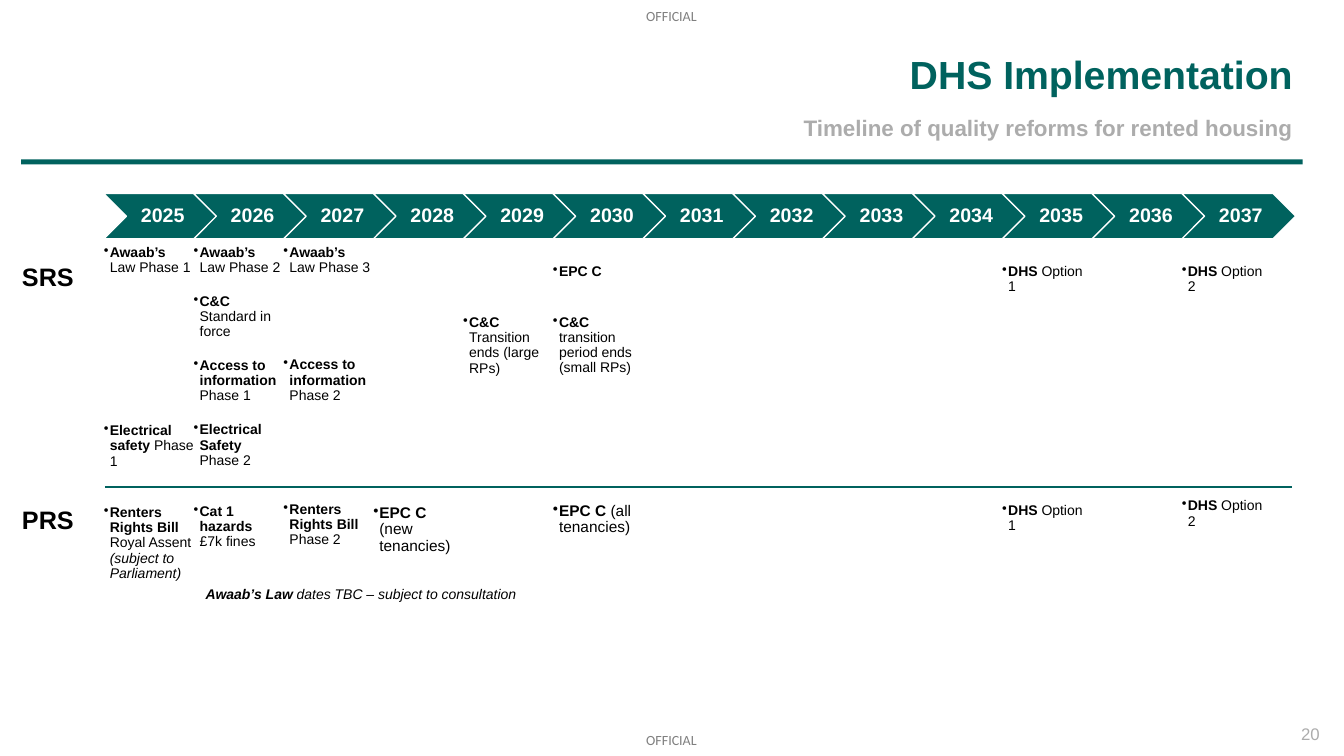
"""Build the slide that shows the timeline of quality reforms for rented housing."""
from lxml.etree import SubElement
from pptx import Presentation
from pptx.dml.color import RGBColor
from pptx.enum.shapes import MSO_CONNECTOR, MSO_SHAPE
from pptx.enum.text import MSO_ANCHOR, PP_ALIGN
from pptx.oxml.ns import qn
from pptx.util import Pt

PX = 9144
GREEN, GREY, BLACK, WHITE = "00625E", "ACACAC", "000000", "FFFFFF"
YEAR_LEFT, YEAR_STEP, COLUMN_BOTTOM = 103, 89.1, 561


def rgb(code):
    return RGBColor.from_string(code)


def write(shape, *paragraphs, size=10, color=BLACK, font="Arial", align=PP_ALIGN.LEFT,
          anchor=MSO_ANCHOR.TOP, insets=(0, 0, 0, 0), wrap=True, spacing=1, bullet=False):
    """Fill a shape; each paragraph is (space before, size or None, runs of (text, style))."""
    frame = shape.text_frame
    frame.word_wrap = wrap
    frame.vertical_anchor = anchor
    frame.margin_left, frame.margin_top, frame.margin_right, frame.margin_bottom = [
        inset * PX for inset in insets]
    for number, (before, own_size, runs) in enumerate(paragraphs):
        paragraph = frame.add_paragraph() if number else frame.paragraphs[0]
        properties = paragraph._p.get_or_add_pPr()
        indent = 6 * PX if bullet else 0
        properties.set("marL", str(indent))
        properties.set("indent", str(-indent))
        if bullet:
            SubElement(properties, qn("a:buChar"), char="•")
        else:
            SubElement(properties, qn("a:buNone"))
        paragraph.alignment = align
        paragraph.line_spacing = spacing
        paragraph.space_before = Pt(before)
        paragraph.space_after = Pt(0)
        points = own_size or size
        for text, style in runs:
            if text == "\n":
                paragraph.add_line_break()
                SubElement(paragraph._p[-1], qn("a:rPr"), sz=str(points * 100))
                continue
            run = paragraph.add_run()
            run.text = text
            run.font.name = font
            run.font.size = Pt(points)
            run.font.bold = "b" in style
            run.font.italic = "i" in style
            run.font.color.rgb = rgb(color)


presentation = Presentation()
presentation.slide_width, presentation.slide_height = 1333 * PX, 750 * PX
slide = presentation.slides.add_slide(presentation.slide_layouts[1])
shapes = slide.shapes

for marking_top in (7, 726):
    marking = shapes.add_textbox(641 * PX, marking_top * PX, 53 * PX, 17 * PX)
    write(marking, (0, None, [("OFFICIAL", "")]), font="Calibri", color="7F7F7F", wrap=False)

header_rule = shapes.add_shape(MSO_SHAPE.RECTANGLE, 21 * PX, 158 * PX, 1271 * PX, 5 * PX)
header_rule.shadow.inherit = False
header_rule.fill.solid()
header_rule.fill.fore_color.rgb = rgb(GREEN)
header_rule.line.fill.background()

title, subtitle = shapes.title, slide.placeholders[1]
headings = [
    (title, "DHS Implementation", (449, 55, 833, 42), 28, GREEN, MSO_ANCHOR.BOTTOM),
    (subtitle, "Timeline of quality reforms for rented housing", (21, 116, 1261, 24), 16, GREY,
     MSO_ANCHOR.TOP),
]
for heading, wording, place, size, color, anchor in headings:
    heading.left, heading.top, heading.width, heading.height = [length * PX for length in place]
    write(heading, (0, None, [(wording, "b")]), size=size, color=color, anchor=anchor,
          align=PP_ALIGN.RIGHT, spacing=0.9)

for position, year in enumerate(range(2025, 2038)):
    left = int((YEAR_LEFT + position * YEAR_STEP) * PX)
    chevron = shapes.add_shape(MSO_SHAPE.CHEVRON, left, 192 * PX, 113 * PX, 45 * PX)
    chevron.shadow.inherit = False
    chevron.fill.solid()
    chevron.fill.fore_color.rgb = rgb(GREEN)
    chevron.line.color.rgb = rgb(WHITE)
    chevron.line.width = Pt(1)
    write(chevron, (0, None, [(str(year), "b")]), size=14, color=WHITE, align=PP_ALIGN.CENTER,
          anchor=MSO_ANCHOR.MIDDLE, insets=(4, 0, 0, 0), wrap=False, spacing=0.9)

reforms = {
    2025: (243, [
        (0, None, [("Awaab’s", "b"), (" Law Phase 1", "")]),
        (106, None, [("Electrical safety ", "b"), ("Phase 1", "")]),
        (26, None, [("Renters Rights Bill ", "b"), ("Royal Assent ", ""),
                    ("(subject to Parliament)", "i")])]),
    2026: (243, [
        (0, None, [("Awaab’s", "b"), (" Law Phase 2", "")]),
        (13.5, None, [("C&C ", "b"), ("Standard in force", "")]),
        (13.5, None, [("Access to information", "b"), (" Phase 1", "")]),
        (13.5, None, [("Electrical Safety ", "b"), ("Phase 2", "")]),
        (25.5, None, [("Cat 1 hazards", "b"), ("\n", ""), ("£7k fines", "")])]),
    2027: (243, [
        (0, None, [("Awaab’s", "b"), (" Law Phase 3", "")]),
        (59, None, [("Access to information ", "b"), ("Phase 2", "")]),
        (70.5, None, [("Renters Rights Bill", "b"), (" Phase 2", "")])]),
    2028: (501, [(0, 11, [("EPC C ", "b"), ("(new tenancies)", "")])]),
    2029: (313, [(0, None, [("C&C ", "b"), ("Transition ends (large RPs)", "")])]),
    2030: (262, [
        (0, None, [("EPC C", "b")]),
        (25.5, None, [("C&C ", "b"), ("transition period ends (small RPs)", "")]),
        (91, 11, [("EPC C ", "b"), ("(all tenancies)", "")])]),
    2035: (262, [
        (0, None, [("DHS", "b"), (" Option 1", "")]),
        (149, None, [("DHS ", "b"), ("Option 1", "")])]),
    2037: (262, [
        (0, None, [("DHS", "b"), (" Option 2", "")]),
        (146, None, [("DHS", "b"), (" Option 2", "")])]),
}
for year, (top, milestones) in reforms.items():
    left = int((YEAR_LEFT + (year - 2025) * YEAR_STEP) * PX)
    column = shapes.add_textbox(left, top * PX, 90 * PX, (COLUMN_BOTTOM - top) * PX)
    write(column, *milestones, bullet=True, spacing=0.9)

for sector, top in (("SRS", 254), ("PRS", 495)):
    sector_label = shapes.add_textbox(12 * PX, top * PX, 73 * PX, 40 * PX)
    write(sector_label, (0, None, [(sector, "b")]), size=18, insets=(10, 5, 10, 5))

sector_divider = shapes.add_connector(MSO_CONNECTOR.STRAIGHT, 104 * PX, 483 * PX, 1281 * PX, 483 * PX)
sector_divider.line.color.rgb = rgb(GREEN)
sector_divider.line.width = Pt(1.5)
SubElement(sector_divider._element.spPr, qn("a:effectLst"))

consultation_note = shapes.add_textbox(194 * PX, 576 * PX, 457 * PX, 27 * PX)
write(consultation_note, (0, None, [("Awaab’s Law ", "bi"),
                                    ("dates TBC – subject to consultation", "i")]),
      insets=(10, 5, 10, 5))

page_number = shapes.add_textbox(1247 * PX, 718 * PX, 62 * PX, 20 * PX)
write(page_number, (0, None, [("20", "")]), size=12, color=GREY, align=PP_ALIGN.RIGHT,
      anchor=MSO_ANCHOR.MIDDLE)

presentation.save("out.pptx")
